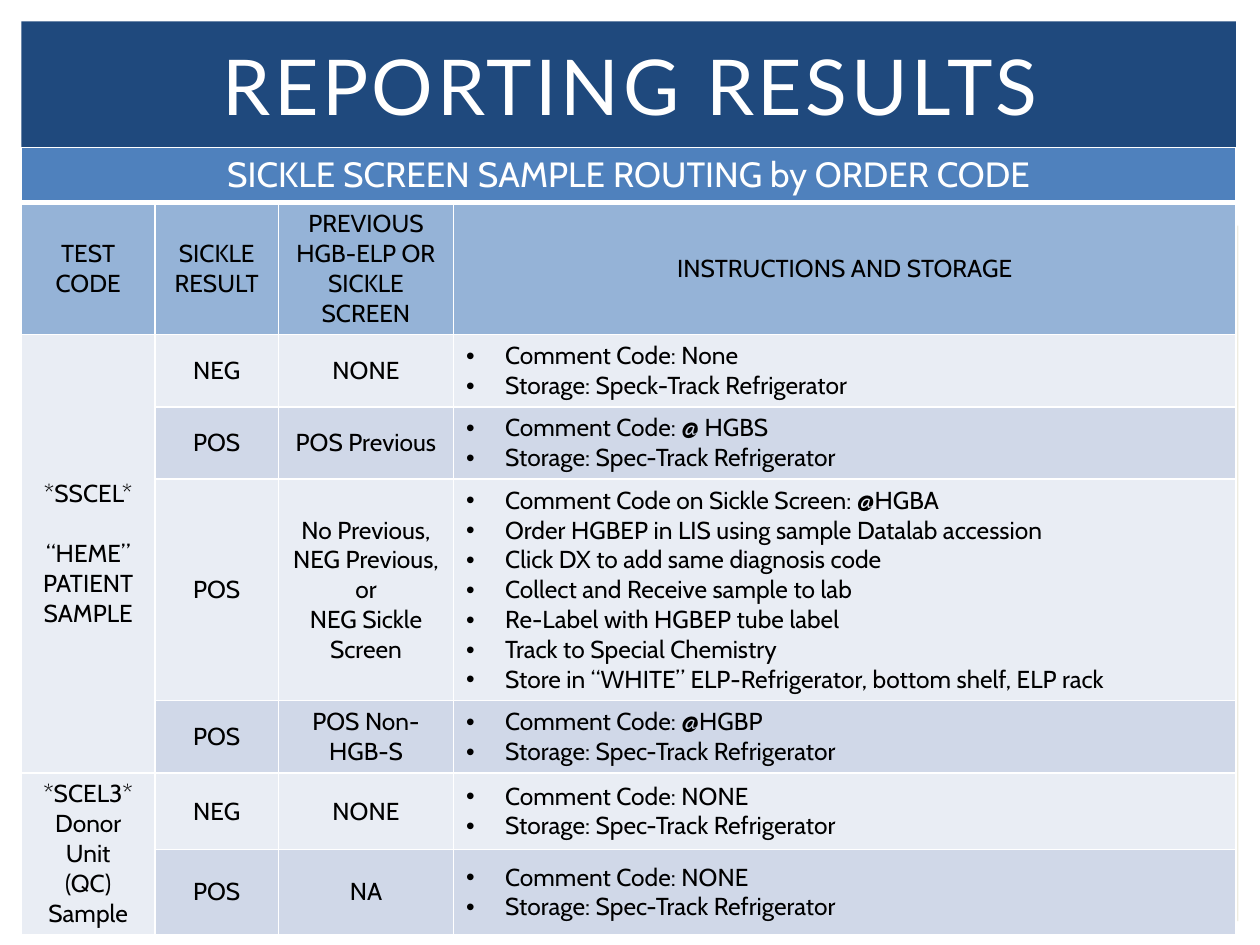
from lxml import etree
from pptx import Presentation
from pptx.dml.color import RGBColor
from pptx.enum import shapes, text
from pptx.oxml import ns
from pptx.util import Inches, Pt

COLORS = {
    "navy": "1F497D", "blue": "4F81BD", "header": "95B3D7", "light": "E9EDF4",
    "dark": "D0D8E8", "cream": "EEECE1", "white": "FFFFFF", "black": "000000",
}
TITLE = "REPORTING RESULTS"
BANNER = "SICKLE SCREEN SAMPLE ROUTING by ORDER CODE"
HEADERS = ["TEST CODE", "SICKLE RESULT", "PREVIOUS HGB-ELP OR SICKLE SCREEN",
           "INSTRUCTIONS AND STORAGE"]
STORAGE = "Storage: Spec-Track Refrigerator"
GROUPS = [
    (["*SSCEL*", "“HEME” PATIENT SAMPLE"], 17, [
        ("NEG", ["NONE"], ["Comment Code: None", "Storage: Speck-Track Refrigerator"]),
        ("POS", ["POS Previous"], ["Comment Code: @ HGBS", STORAGE]),
        ("POS", ["No Previous,", "NEG Previous, or", "NEG Sickle Screen"], [
            "Comment Code on Sickle Screen: @HGBA",
            "Order HGBEP in LIS using sample Datalab accession",
            "Click DX to add same diagnosis code",
            "Collect and Receive sample to lab",
            "Re-Label with HGBEP tube label",
            "Track to Special Chemistry",
            "Store in “WHITE” ELP-Refrigerator, bottom shelf, ELP rack",
        ]),
        ("POS", ["POS Non-HGB-S"], ["Comment Code: @HGBP", STORAGE]),
    ]),
    (["*SCEL3*", "Donor Unit", "(QC)", "Sample"], 0, [
        ("NEG", ["NONE"], ["Comment Code: NONE", STORAGE]),
        ("POS", ["NA"], ["Comment Code: NONE", STORAGE]),
    ]),
]
COLUMN_WIDTHS = [1.06, 0.98, 1.39, 6.21]
ROW_HEIGHTS = [0.39, 1.01, 0.55, 0.55, 1.7, 0.55, 0.61, 0.62]
BULLET_INDENT = Inches(0.31)


def color(name):
    return RGBColor.from_string(COLORS[name])


def add_panel(page, left, top, width, height, fill):
    panel = page.shapes.add_shape(shapes.MSO_SHAPE.RECTANGLE, Inches(left),
                                  Inches(top), Inches(width), Inches(height))
    panel.shadow.inherit = False
    panel.fill.solid()
    panel.fill.fore_color.rgb = color(fill)
    panel.line.fill.background()


def add_bullet(para):
    properties = para._p.get_or_add_pPr()
    properties.set("marL", str(BULLET_INDENT))
    properties.set("indent", str(-BULLET_INDENT))
    font = etree.SubElement(properties, ns.qn("a:buFont"))
    font.set("typeface", "Arial")
    etree.SubElement(properties, ns.qn("a:buChar")).set("char", "•")


def write(frame, lines, size, ink="black", font="Cabin", bullets=False, gap=0):
    for index, line in enumerate(lines):
        para = frame.add_paragraph() if index else frame.paragraphs[0]
        para.alignment = text.PP_ALIGN.LEFT if bullets else text.PP_ALIGN.CENTER
        if index and gap:
            para.space_before = Pt(gap)
        if bullets:
            add_bullet(para)
        span = para.add_run()
        span.text = line
        span.font.size = Pt(size)
        span.font.name = font
        span.font.bold = False
        span.font.color.rgb = color(ink)


def set_borders(cell, row):
    properties = cell._tc.get_or_add_tcPr()
    widths = {"lnL": 1, "lnR": 1, "lnT": 3 if row == 1 else 1, "lnB": 3 if row == 0 else 1}
    for index, (side, width) in enumerate(widths.items()):
        line = etree.Element(ns.qn(f"a:{side}"), w=str(Pt(width)))
        fill = etree.SubElement(line, ns.qn("a:solidFill"))
        etree.SubElement(fill, ns.qn("a:srgbClr")).set("val", COLORS["white"])
        properties.insert(index, line)


def add_routing_table(page):
    frame = page.shapes.add_table(len(ROW_HEIGHTS), len(COLUMN_WIDTHS), Inches(0.17),
                                  Inches(1.17), Inches(sum(COLUMN_WIDTHS)),
                                  Inches(sum(ROW_HEIGHTS)))
    table = frame.table
    for column, width in zip(table.columns, COLUMN_WIDTHS):
        column.width = Inches(width)
    for index, (row, height) in enumerate(zip(table.rows, ROW_HEIGHTS)):
        row.height = Inches(height)
        shade = ["blue", "header"][index] if index < 2 else ["light", "dark"][index % 2]
        for column, cell in enumerate(row.cells):
            cell.fill.solid()
            cell.fill.fore_color.rgb = color("light" if index > 1 and column == 0 else shade)
            cell.vertical_anchor = text.MSO_ANCHOR.MIDDLE
            set_borders(cell, index)

    banner = table.cell(0, 0)
    banner.merge(table.cell(0, len(COLUMN_WIDTHS) - 1))
    banner.vertical_anchor = text.MSO_ANCHOR.TOP
    write(banner.text_frame, [BANNER], 20, "white")
    for column, header in enumerate(HEADERS):
        write(table.cell(1, column).text_frame, [header], 14)

    first = 2
    for code, gap, results in GROUPS:
        code_cell = table.cell(first, 0)
        code_cell.merge(table.cell(first + len(results) - 1, 0))
        write(code_cell.text_frame, code, 14, gap=gap)
        for row, (result, previous, steps) in enumerate(results, first):
            write(table.cell(row, 1).text_frame, [result], 14)
            write(table.cell(row, 2).text_frame, previous, 14)
            write(table.cell(row, 3).text_frame, steps, 14, bullets=True)
        first += len(results)


def add_title(page):
    title = page.shapes.title
    title.left, title.top = Inches(0.17), Inches(0.17)
    title.width, title.height = Inches(9.67), Inches(1.01)
    frame = title.text_frame
    frame.word_wrap = True
    frame.vertical_anchor = text.MSO_ANCHOR.MIDDLE
    write(frame, [TITLE], 44, "white", "Lato")
    frame.paragraphs[0].runs[0]._r.get_or_add_rPr().set("spc", "200")
    page.shapes._spTree.append(title._element)


def main():
    deck = Presentation()
    deck.slide_width, deck.slide_height = Inches(10), Inches(7.5)
    page = deck.slides.add_slide(deck.slide_layouts[5])
    add_panel(page, 0.17, 1.79, 9.66, 5.52, "cream")
    add_panel(page, 0.17, 0.17, 9.64, 1.47, "navy")
    add_routing_table(page)
    add_title(page)
    deck.save("out.pptx")


if __name__ == "__main__":
    main()
